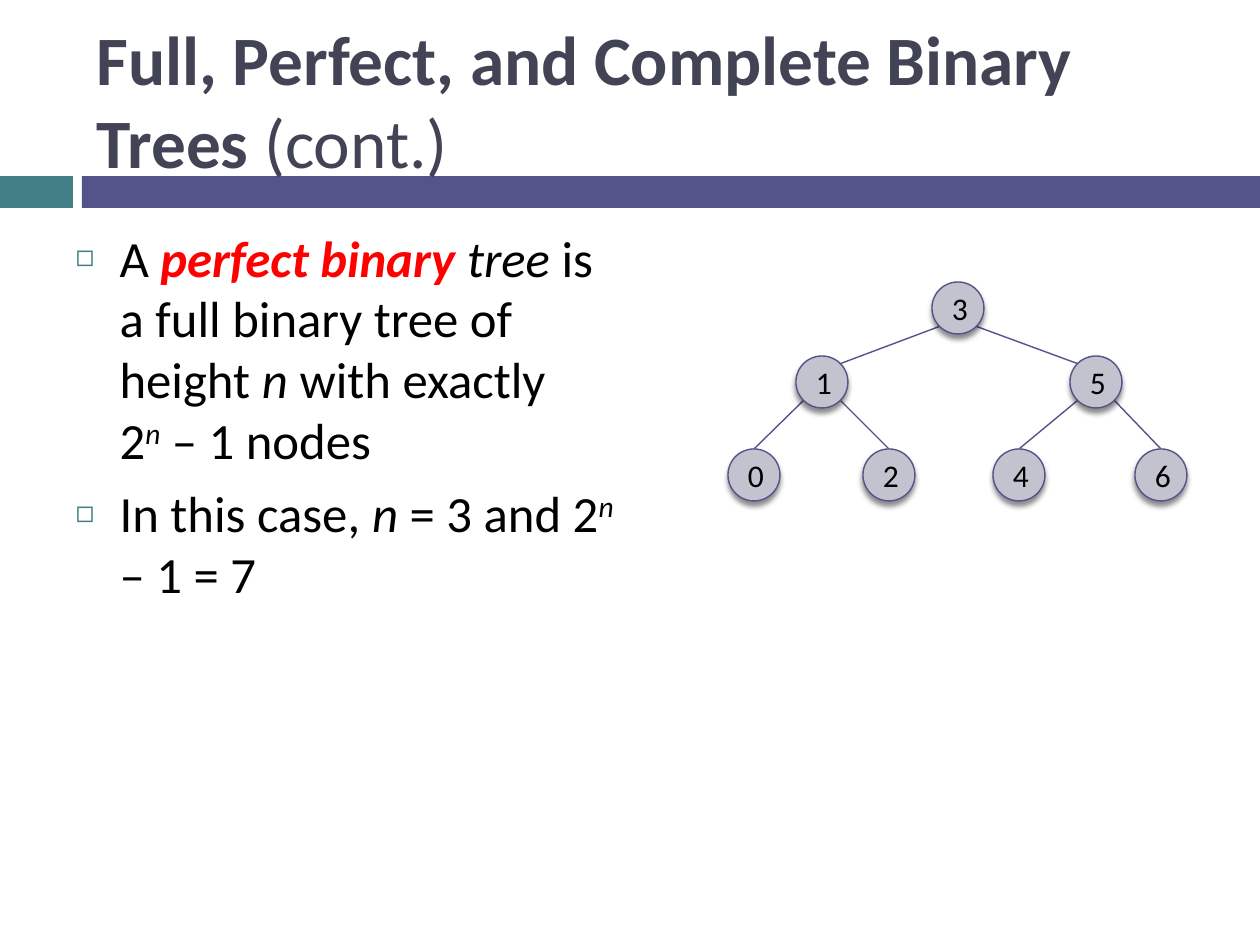
from math import sqrt

from lxml.etree import SubElement
from pptx import Presentation
from pptx.dml.color import RGBColor
from pptx.enum.shapes import MSO_CONNECTOR, MSO_SHAPE
from pptx.enum.text import MSO_ANCHOR, MSO_AUTO_SIZE, PP_ALIGN
from pptx.oxml.ns import qn
from pptx.util import Emu, Pt

EMU_PER_PX = 914400 / 126
FONT = "Calibri"
TEAL = RGBColor(0x43, 0x80, 0x86)
INDIGO = RGBColor(0x53, 0x54, 0x8A)
SLATE = RGBColor(0x42, 0x44, 0x56)
NODE_GREY = RGBColor(0xC3, 0xC3, 0xCF)
BLACK = RGBColor(0, 0, 0)
RED = RGBColor(0xFF, 0, 0)

NODE_SIZE = 52
LINE_WIDTH = Pt(0.79)
BULLET_INDENT = 44

# Value: (centre x, centre y)
NODES = {
    "3": (958, 308),
    "1": (822, 382), "5": (1096, 382),
    "0": (754, 475), "2": (889, 475), "4": (1019, 475), "6": (1161, 475),
}
CHILDREN = {"3": "15", "1": "02", "5": "46"}

# Each run: (text, style), where i = italic, b = bold red, ^ = superscript
BULLETS = [
    [("A ", ""), ("perfect binary ", "bi"), ("tree ", "i"),
     ("is a full binary tree of height ", ""), ("n", "i"),
     (" with exactly ", ""), ("\n", ""), ("2", ""), ("n", "i^"),
     (" – 1 nodes", "")],
    [("In this case, ", ""), ("n", "i"), (" = 3 and 2", ""), ("n", "i^"),
     (" – 1 = 7", "")],
]


def px(length):
    return Emu(round(length * EMU_PER_PX))


def place(shape, left, top, width, height):
    shape.left, shape.top = px(left), px(top)
    shape.width, shape.height = px(width), px(height)


def set_font(paragraph, size, color):
    font = paragraph.font
    font.name, font.size = FONT, Pt(size)
    font.color.rgb = color


def add_bar(slide, left, width, color):
    bar = slide.shapes.add_shape(
        MSO_SHAPE.RECTANGLE, px(left), px(176), px(width), px(32))
    bar.shadow.inherit = False
    bar.fill.solid()
    bar.fill.fore_color.rgb = color
    bar.line.fill.background()


def fill_title(title):
    place(title, 84, 31, 1124, 136)
    frame = title.text_frame
    frame.auto_size = MSO_AUTO_SIZE.NONE
    frame.vertical_anchor = MSO_ANCHOR.MIDDLE
    heading = frame.paragraphs[0]
    heading.alignment = PP_ALIGN.LEFT
    set_font(heading, 39.6, SLATE)
    for text, bold in (("Full, Perfect, and Complete Binary Trees ", True),
                       ("(cont.)", False)):
        run = heading.add_run()
        run.text, run.font.bold = text, bold


def set_bullet(paragraph):
    """Give the paragraph a small hollow square and a hanging indent."""
    properties = paragraph._p.get_or_add_pPr()
    properties.set("marL", str(px(BULLET_INDENT)))
    properties.set("indent", str(px(-BULLET_INDENT)))
    color = SubElement(properties, qn("a:buClr"))
    SubElement(color, qn("a:srgbClr"), val=str(TEAL))
    SubElement(properties, qn("a:buSzPct"), val="60000")
    SubElement(properties, qn("a:buChar"), char="◻")


def add_styled_run(paragraph, text, style):
    if text == "\n":
        paragraph.add_line_break()
        return
    run = paragraph.add_run()
    run.text = text
    if "i" in style:
        run.font.italic = True
    if "b" in style:
        run.font.bold = True
        run.font.color.rgb = RED
    if "^" in style:
        run._r.get_or_add_rPr().set("baseline", "30000")


def fill_body(body):
    place(body, 63, 220, 577, 624)
    frame = body.text_frame
    frame.auto_size = MSO_AUTO_SIZE.NONE
    for index, runs in enumerate(BULLETS):
        item = frame.add_paragraph() if index else frame.paragraphs[0]
        item.space_before = Pt(7)
        set_bullet(item)
        set_font(item, 29, BLACK)
        for text, style in runs:
            add_styled_run(item, text, style)


def add_edge(slide, parent, child):
    """Join a parent's lower diagonal to its child's facing diagonal or top."""
    (x1, y1), (x2, y2) = NODES[parent], NODES[child]
    radius = NODE_SIZE / 2
    diagonal = radius / sqrt(2)
    side = 1 if x2 > x1 else -1
    if child in CHILDREN:
        end = x2 - side * diagonal, y2 - diagonal
    else:
        end = x2, y2 - radius
    edge = slide.shapes.add_connector(
        MSO_CONNECTOR.STRAIGHT, px(x1 + side * diagonal), px(y1 + diagonal),
        px(end[0]), px(end[1]))
    edge.line.color.rgb = INDIGO
    edge.line.width = LINE_WIDTH
    SubElement(edge._element.spPr, qn("a:effectLst"))


def add_drop_shadow(shape):
    shape.shadow.inherit = False
    effects = shape._element.spPr.find(qn("a:effectLst"))
    shadow = SubElement(effects, qn("a:outerShdw"), blurRad=str(Pt(3)),
                        dist=str(Pt(2.4)), dir="5400000", rotWithShape="0")
    color = SubElement(shadow, qn("a:srgbClr"), val=str(BLACK))
    SubElement(color, qn("a:alpha"), val="45000")


def add_node(slide, value):
    x, y = NODES[value]
    node = slide.shapes.add_shape(
        MSO_SHAPE.OVAL, px(x - NODE_SIZE / 2), px(y - NODE_SIZE / 2),
        px(NODE_SIZE), px(NODE_SIZE))
    node.fill.solid()
    node.fill.fore_color.rgb = NODE_GREY
    node.line.color.rgb = INDIGO
    node.line.width = LINE_WIDTH
    add_drop_shadow(node)
    node.text_frame.vertical_anchor = MSO_ANCHOR.MIDDLE
    label = node.text_frame.paragraphs[0]
    label.alignment = PP_ALIGN.CENTER
    label.add_run().text = value
    set_font(label, 18, BLACK)


def main():
    presentation = Presentation()
    presentation.slide_width, presentation.slide_height = px(1260), px(945)
    slide = presentation.slides.add_slide(presentation.slide_layouts[1])
    add_bar(slide, 0, 73, TEAL)
    add_bar(slide, 82, 1178, INDIGO)
    # Bars go behind the title, whose second line reaches down to them
    tree = slide.shapes._spTree
    for placeholder in slide.placeholders:
        tree.append(placeholder._element)
    fill_title(slide.shapes.title)
    fill_body(slide.placeholders[1])
    for parent, children in CHILDREN.items():
        for child in children:
            add_edge(slide, parent, child)
    for value in NODES:
        add_node(slide, value)
    presentation.save("out.pptx")


if __name__ == "__main__":
    main()
